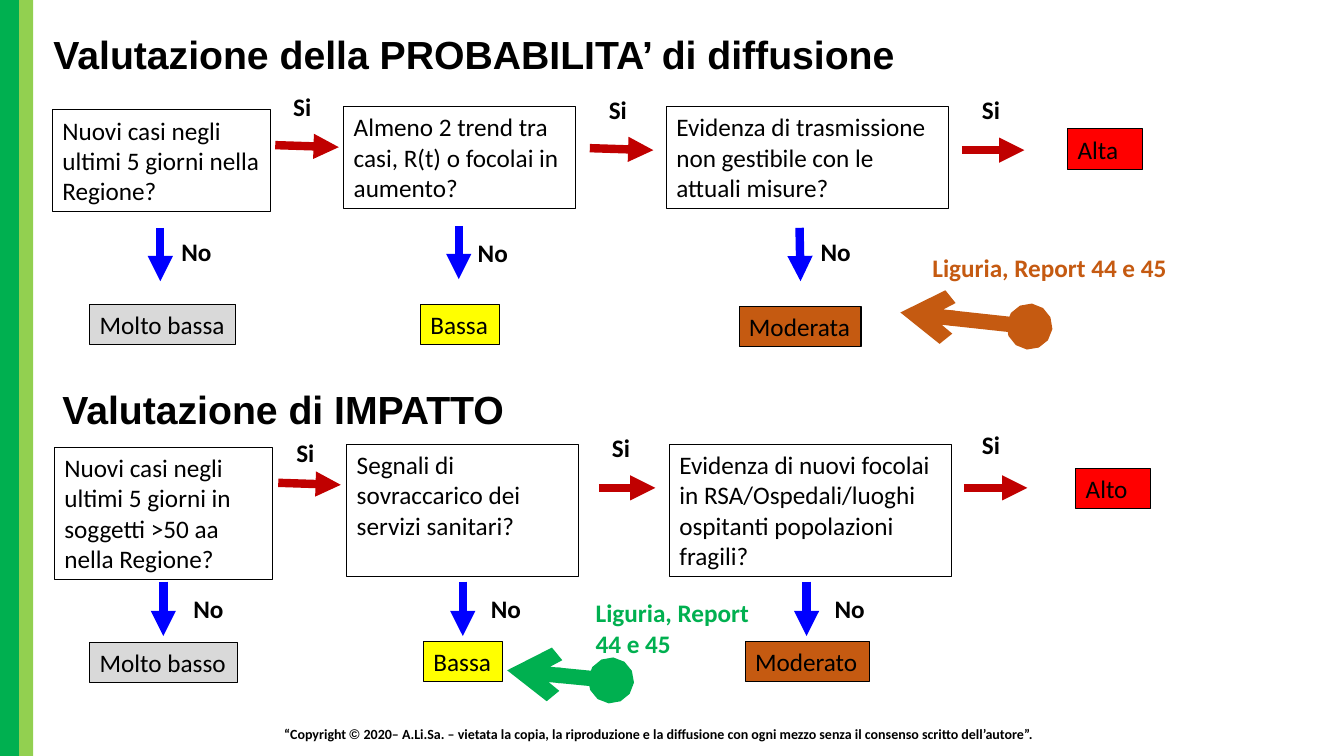
import pptx
import pptx.util
import pptx.dml.color
import pptx.enum.shapes
import pptx.enum.text
import pptx.oxml.xmlchemy

PX = 9144  # 100 px to the inch
BLACK, RED, BLUE, GREEN, BROWN = "000000", "C00000", "0000FF", "00B050", "C55A11"
GREY, YELLOW, BRIGHT_RED = "D9D9D9", "FFFF00", "FF0000"
RECTANGLE = pptx.enum.shapes.MSO_SHAPE.RECTANGLE
STRAIGHT = pptx.enum.shapes.MSO_CONNECTOR.STRAIGHT
LEFT = pptx.enum.text.PP_ALIGN.LEFT
CENTER = pptx.enum.text.PP_ALIGN.CENTER
TOP = pptx.enum.text.MSO_ANCHOR.TOP
MIDDLE = pptx.enum.text.MSO_ANCHOR.MIDDLE
hex_color = pptx.dml.color.RGBColor.from_string
new_element = pptx.oxml.xmlchemy.OxmlElement

presentation = pptx.Presentation()
presentation.slide_width, presentation.slide_height = 1333 * PX, 750 * PX
slide = presentation.slides.add_slide(presentation.slide_layouts[5])
shapes = slide.shapes


def write(shape, runs, wrap=True, anchor=TOP, align=LEFT, spacing=1.0,
          size=18, bold=False, color=BLACK):
    """Fill a shape with one paragraph of (text, font name) runs."""
    frame = shape.text_frame
    frame.word_wrap = wrap
    frame.vertical_anchor = anchor
    paragraph = frame.paragraphs[0]
    paragraph.alignment = align
    paragraph.line_spacing = spacing
    for text, font_name in runs:
        run = paragraph.add_run()
        run.text = text
        font_format = {"name": font_name, "size": pptx.util.Pt(size), "bold": bold}
        for attribute, value in font_format.items():
            setattr(run.font, attribute, value)
        run.font.color.rgb = hex_color(color)


def add_arrow(points, color, width, tail, head="none"):
    """Draw a line with the given end decorations."""
    arrow = shapes.add_connector(STRAIGHT, *[value * PX for value in points])
    arrow.line.color.rgb = hex_color(color)
    arrow.line.width = pptx.util.Pt(width)
    line = arrow.line._get_or_add_ln()
    for tag, kind in (("a:headEnd", head), ("a:tailEnd", tail)):
        end = new_element(tag)
        end.set("type", kind)
        line.append(end)
    arrow._element.spPr.append(new_element("a:effectLst"))


# Side bands
for left, width, color in ((0, 19, GREEN), (19, 14, "92D050")):
    band = shapes.add_shape(RECTANGLE, left * PX, 0, width * PX, 750 * PX)
    band.shadow.inherit = False
    band.fill.solid()
    band.fill.fore_color.rgb = hex_color(color)
    band.line.fill.background()

# Headings
probability_title = shapes.title
impact_title = shapes.add_textbox(0, 0, 0, 0)
headings = (
    (probability_title, (43, -3, 1318, 119), "Valutazione della PROBABILITA’ di diffusione"),
    (impact_title, (52, 366, 1318, 85), "Valutazione di IMPATTO"),
)
for heading, place, text in headings:
    for attribute, value in zip(("left", "top", "width", "height"), place):
        setattr(heading, attribute, value * PX)
    write(heading, [(text, "Arial")], anchor=MIDDLE, spacing=0.9, size=28, bold=True)

# Questions and outcomes: place, text, fill, wrap
boxes = (
    ((52, 109, 216, 101), "Nuovi casi negli ultimi 5 giorni nella Regione?", None, True),
    ((341, 106, 230, 101), "Almeno 2 trend tra casi, R(t) o focolai in aumento?", None, True),
    ((661, 106, 280, 101), "Evidenza di trasmissione non gestibile con le attuali misure?", None, True),
    ((54, 444, 216, 131), "Nuovi casi negli ultimi 5 giorni in soggetti >50 aa nella Regione?", None, True),
    ((344, 441, 230, 131), "Segnali di sovraccarico dei servizi sanitari?", None, True),
    ((664, 441, 280, 131),
     "Evidenza di nuovi focolai in RSA/Ospedali/luoghi ospitanti popolazioni fragili?", None, True),
    ((89, 302, 145, 40), "Molto bassa", GREY, False),
    ((417, 302, 78, 40), "Bassa", YELLOW, False),
    ((733, 304, 121, 40), "Moderata", BROWN, False),
    ((1059, 128, 74, 40), "Alta", BRIGHT_RED, True),
    ((89, 637, 147, 40), "Molto basso", GREY, False),
    ((420, 636, 78, 40), "Bassa", YELLOW, False),
    ((739, 636, 123, 40), "Moderato", BROWN, False),
    ((1067, 465, 74, 40), "Alto", BRIGHT_RED, True),
)
for place, text, fill, wrap in boxes:
    box = shapes.add_shape(RECTANGLE, *[value * PX for value in place])
    box.shadow.inherit = False
    if fill:
        box.fill.solid()
        box.fill.fore_color.rgb = hex_color(fill)
    else:
        box.fill.background()
    box.line.color.rgb = hex_color(BLACK)
    box.line.width = pptx.util.Pt(0.75)
    write(box, [(text, "Calibri")], wrap=wrap)

# Yes and no branches: arrow ends, then left and top of the label
branches = {
    ("Si", RED, 38): (
        ((273, 144, 336, 146), (281, 86)),
        ((585, 147, 648, 149), (594, 89)),
        ((954, 149, 1016, 149), (964, 89)),
        ((276, 479, 338, 481), (284, 429)),
        ((594, 484, 650, 484), (597, 424)),
        ((956, 484, 1019, 484), (964, 421)),
    ),
    ("No", BLUE, 50): (
        ((159, 226, 159, 279), (170, 230)),
        ((455, 224, 455, 277), (464, 231)),
        ((793, 226, 794, 279), (804, 230)),
        ((162, 577, 162, 631), (182, 584)),
        ((459, 577, 459, 631), (477, 584)),
        ((800, 577, 800, 631), (818, 584)),
    ),
}
for (answer, color, width), steps in branches.items():
    for points, (left, top) in steps:
        add_arrow(points, color, 6, "triangle")
        label = shapes.add_textbox(left * PX, top * PX, width * PX, 40 * PX)
        write(label, [(answer, "Calibri")], wrap=False, bold=True)

# Pointers to the current regional rating
ratings = (
    ((606, 675, 503, 665), (581, 588, 194, 71), GREEN, LEFT),
    ((1021, 324, 893, 310), (908, 245, 266, 40), BROWN, CENTER),
)
for points, place, color, align in ratings:
    add_arrow(points, color, 11, "arrow", head="oval")
    rating = shapes.add_textbox(*[value * PX for value in place])
    write(rating, [("Liguria, Report 44 e 45", "Calibri")], align=align, bold=True, color=color)

# Copyright line
copyright_line = shapes.add_textbox(272 * PX, 715 * PX, 790 * PX, 27 * PX)
write(copyright_line, [
    ("“Copyright ", "Calibri"),
    ("© ", "Arial"),
    ("2020– A.Li.Sa. – vietata la copia, la riproduzione e la diffusione con ogni mezzo "
     "senza il consenso scritto dell’autore”.", "Calibri"),
], size=10, bold=True)

presentation.save("out.pptx")
